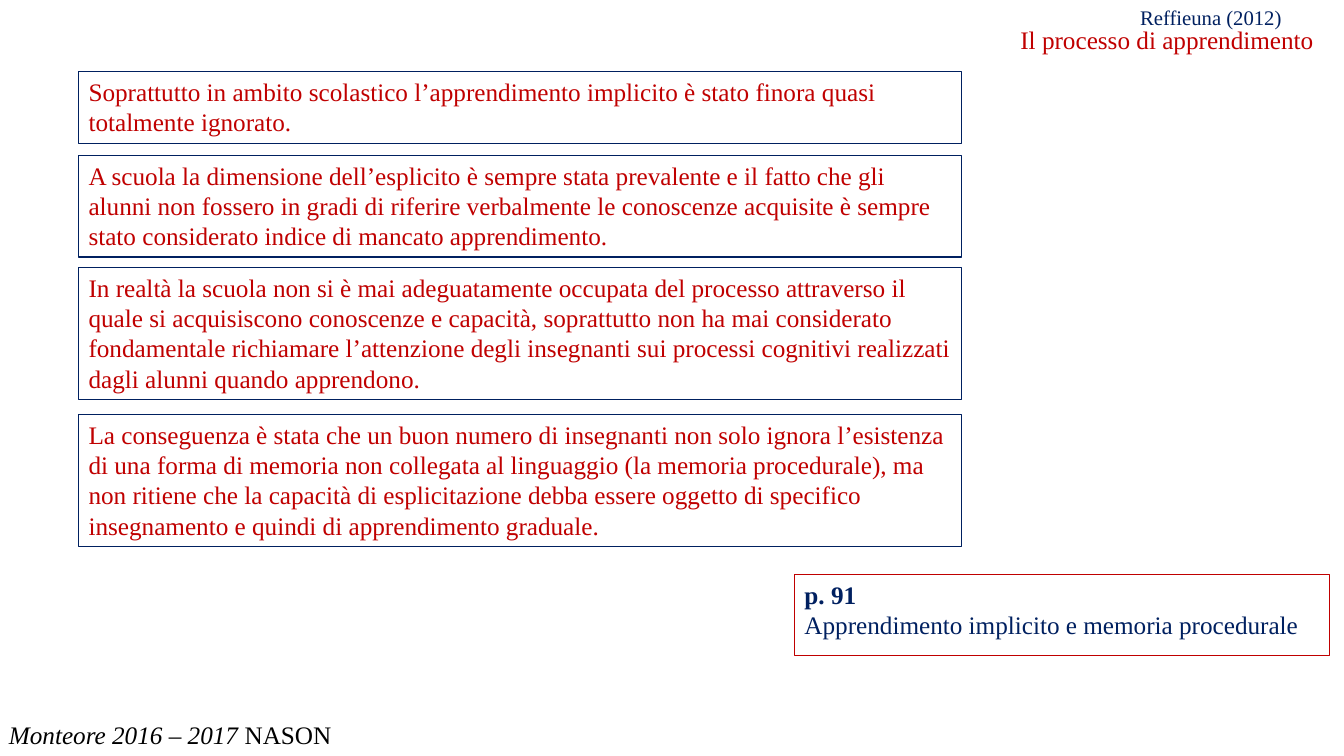
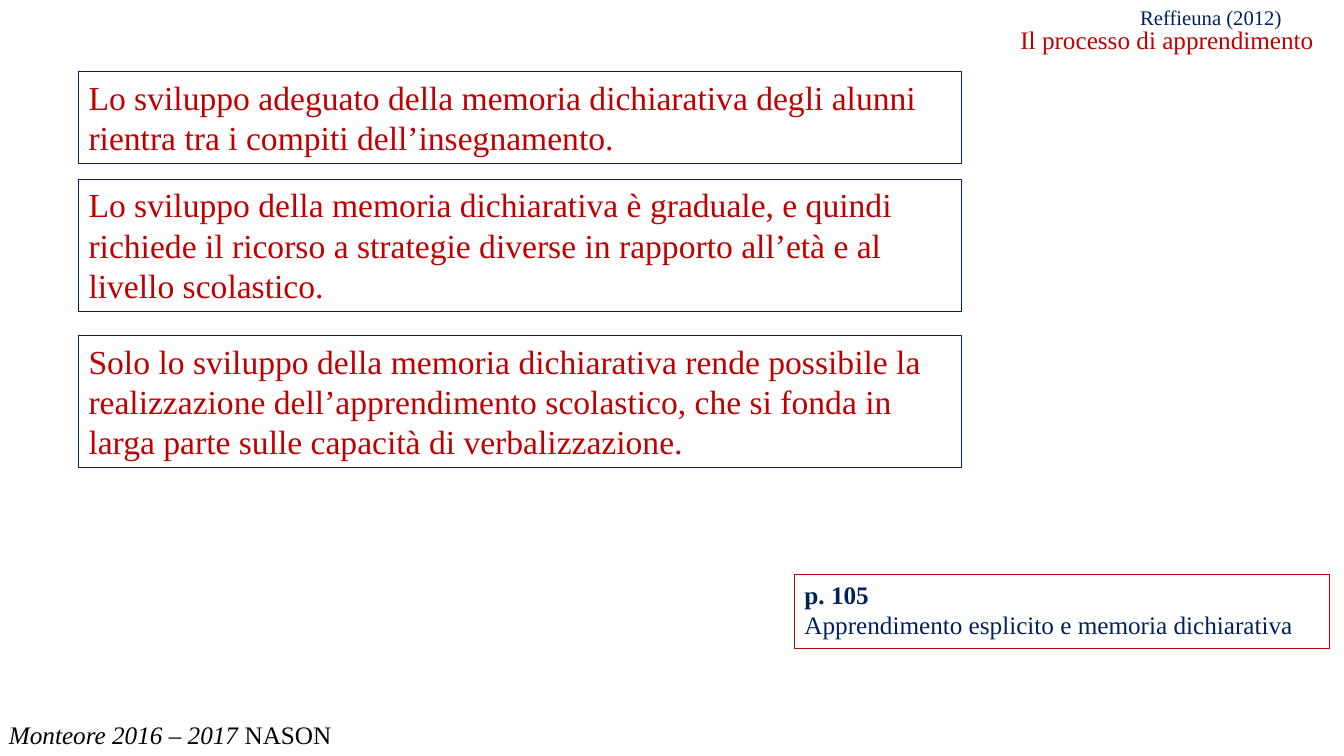
from dataclasses import dataclass

from pptx import Presentation
from pptx.dml.color import RGBColor
from pptx.enum.shapes import MSO_SHAPE
from pptx.enum.text import MSO_ANCHOR, MSO_AUTO_SIZE, PP_ALIGN
from pptx.shapes.autoshape import Shape
from pptx.slide import Slide
from pptx.text.text import TextFrame
from pptx.util import Inches, Pt

RECTANGLE = MSO_SHAPE.RECTANGLE
TOP = MSO_ANCHOR.TOP
LEFT = PP_ALIGN.LEFT
NO_AUTOFIT = MSO_AUTO_SIZE.NONE
TITLE_ONLY = 5

COLORS = {"navy": "002060", "red": "C00000", "black": "000000"}
FONT = "Times New Roman"
BODY_SIZE = 18
SOURCE_SIZE = 14.8
STATEMENT_WIDTH = 8.76


@dataclass(frozen=True)
class Statement:
    top: float
    lines: int
    text: str


@dataclass(frozen=True)
class Reference:
    page: str
    topic: str
    height: float


@dataclass(frozen=True)
class Lesson:
    size: int
    statements: tuple[Statement, ...]
    reference: Reference


LESSONS = (
    Lesson(18, (
        Statement(0.71, 2, "Soprattutto in ambito scolastico l’apprendimento implicito è stato "
                  "finora quasi totalmente ignorato."),
        Statement(1.54, 3, "A scuola la dimensione dell’esplicito è sempre stata prevalente e il "
                  "fatto che gli alunni non fossero in gradi di riferire verbalmente le conoscenze "
                  "acquisite è sempre stato considerato indice di mancato apprendimento."),
        Statement(2.65, 4, "In realtà la scuola non si è mai adeguatamente occupata del processo "
                  "attraverso il quale si acquisiscono conoscenze e capacità, soprattutto non ha "
                  "mai considerato fondamentale richiamare l’attenzione degli insegnanti sui "
                  "processi cognitivi realizzati dagli alunni quando apprendono."),
        Statement(4.11, 4, "La conseguenza è stata che un buon numero di insegnanti non solo "
                  "ignora l’esistenza di una forma di memoria non collegata al linguaggio (la "
                  "memoria procedurale), ma non ritiene che la capacità di esplicitazione debba "
                  "essere oggetto di specifico insegnamento e quindi di apprendimento graduale."),
    ), Reference("p. 91", "Apprendimento implicito e memoria procedurale", 0.8)),
    Lesson(24, (
        Statement(0.71, 2, "Lo sviluppo adeguato della memoria dichiarativa degli alunni rientra "
                  "tra i compiti dell’insegnamento."),
        Statement(1.78, 3, "Lo sviluppo della memoria dichiarativa è graduale, e quindi richiede "
                  "il ricorso a strategie diverse in rapporto all’età e al livello scolastico."),
        Statement(3.33, 3, "Solo lo sviluppo della memoria dichiarativa rende possibile la "
                  "realizzazione dell’apprendimento scolastico, che si fonda in larga parte sulle "
                  "capacità di verbalizzazione."),
    ), Reference("p. 105", "Apprendimento esplicito e memoria dichiarativa", 0.73)),
)


def rgb(color: str) -> RGBColor:
    return RGBColor.from_string(COLORS[color])


def format_text(frame: TextFrame, size: float, color: str, line_spacing: float = 1.0) -> None:
    frame.word_wrap = True
    frame.auto_size = NO_AUTOFIT
    frame.vertical_anchor = TOP
    for paragraph in frame.paragraphs:
        paragraph.alignment = LEFT
        paragraph.line_spacing = line_spacing
        for run in paragraph.runs:
            run.font.name = FONT
            run.font.size = Pt(size)
            run.font.color.rgb = rgb(color)


def add_text(slide: Slide, left: float, top: float, width: float, height: float,
             text: str) -> TextFrame:
    label = slide.shapes.add_textbox(Inches(left), Inches(top), Inches(width), Inches(height))
    label.text_frame.text = text
    return label.text_frame


def add_outlined_box(slide: Slide, left: float, top: float, width: float, height: float,
                     outline: str) -> Shape:
    box = slide.shapes.add_shape(RECTANGLE, Inches(left), Inches(top), Inches(width),
                                 Inches(height))
    box.shadow.inherit = False
    box.fill.background()
    box.line.color.rgb = rgb(outline)
    box.line.width = Pt(0.75)
    return box


def add_heading_and_footer(slide: Slide) -> None:
    title = slide.shapes.title
    title.left, title.top = Inches(10.02), Inches(0.22)
    title.width, title.height = Inches(3.31), Inches(0.37)
    title.text_frame.text = "Il processo di apprendimento"
    format_text(title.text_frame, BODY_SIZE, "red", 0.9)

    source = add_text(slide, 11.21, 0.05, 2.24, 0.31, "Reffieuna (2012)")
    format_text(source, SOURCE_SIZE, "navy", 0.8)

    footer = add_text(slide, -0.01, 7.09, 3.63, 0.4, "Monteore 2016 – 2017 ")
    course = footer.paragraphs[0]
    course.runs[0].font.italic = True
    course.add_run().text = "NASON"
    format_text(footer, BODY_SIZE, "black")


def add_statement(slide: Slide, statement: Statement, size: int) -> None:
    """Frame the statement in a box as tall as its lines of text."""
    height = statement.lines * size / 60 + 0.11
    box = add_outlined_box(slide, 0.78, statement.top, STATEMENT_WIDTH, height, "navy")
    box.text_frame.text = statement.text
    format_text(box.text_frame, size, "red")


def add_reference(slide: Slide, reference: Reference) -> None:
    box = add_outlined_box(slide, 7.88, 5.7, 5.31, reference.height, "red")
    box.text_frame.text = f"{reference.page}\n{reference.topic}"
    format_text(box.text_frame, BODY_SIZE, "navy")
    box.text_frame.paragraphs[0].runs[0].font.bold = True


def main() -> None:
    deck = Presentation()
    deck.slide_width, deck.slide_height = Inches(13.33), Inches(7.5)
    for lesson in LESSONS:
        slide = deck.slides.add_slide(deck.slide_layouts[TITLE_ONLY])
        add_heading_and_footer(slide)
        for statement in lesson.statements:
            add_statement(slide, statement, lesson.size)
        add_reference(slide, lesson.reference)
    deck.save("out.pptx")


if __name__ == "__main__":
    main()
